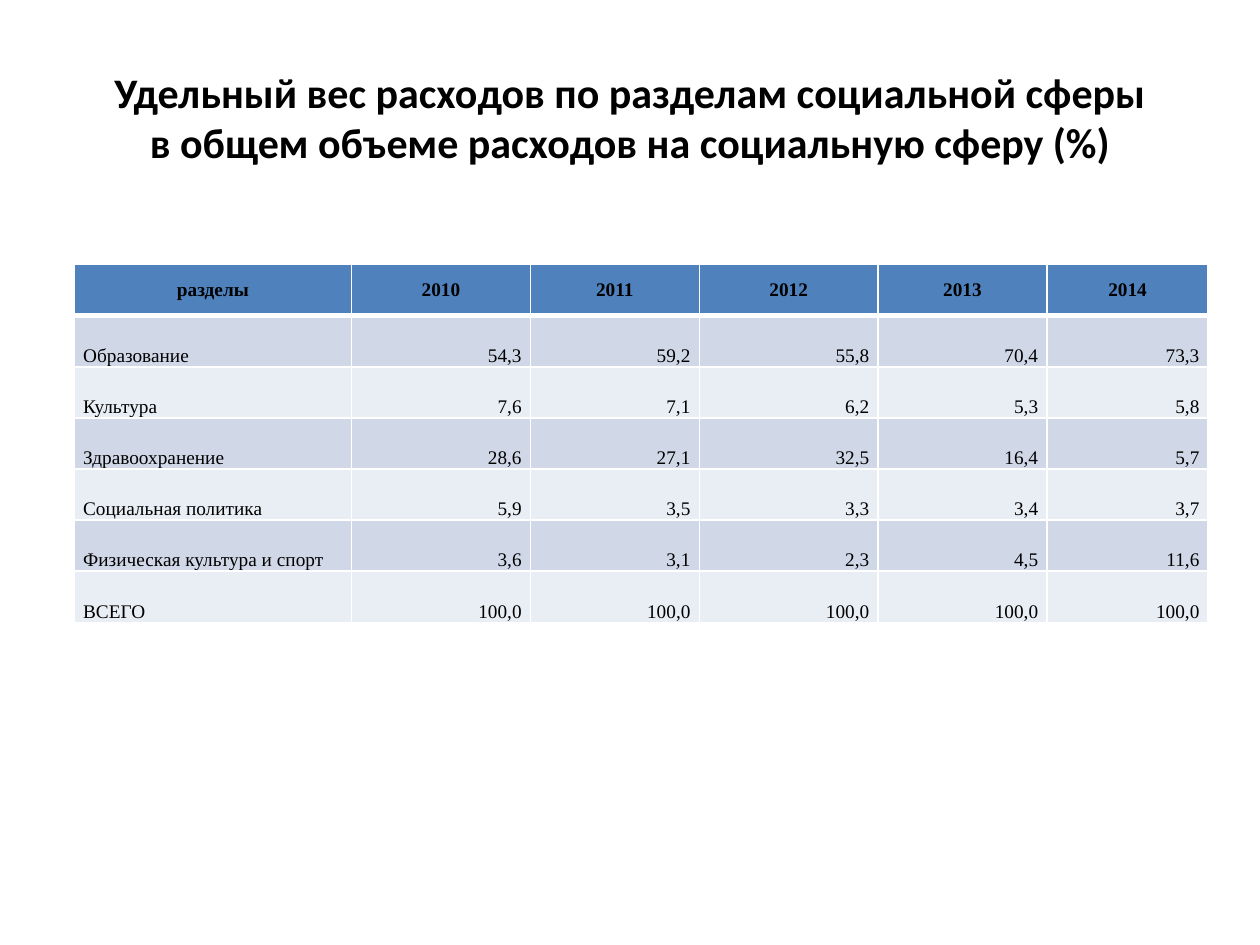
from lxml.etree import SubElement
from pptx import Presentation
from pptx.dml.color import RGBColor
from pptx.enum.text import MSO_ANCHOR, PP_ALIGN
from pptx.oxml.ns import qn
from pptx.util import Inches, Pt

TITLE = [
    "Удельный вес расходов по разделам социальной сферы",
    "в общем объеме расходов на социальную сферу (%)",
]
HEADER = ["разделы", "2010", "2011", "2012", "2013", "2014"]
ROWS = [
    ["Образование", "54,3", "59,2", "55,8", "70,4", "73,3"],
    ["Культура", "7,6", "7,1", "6,2", "5,3", "5,8"],
    ["Здравоохранение", "28,6", "27,1", "32,5", "16,4", "5,7"],
    ["Социальная политика", "5,9", "3,5", "3,3", "3,4", "3,7"],
    ["Физическая культура и спорт", "3,6", "3,1", "2,3", "4,5", "11,6"],
    ["ВСЕГО", "100,0", "100,0", "100,0", "100,0", "100,0"],
]
COL_WIDTHS = [2.2, 1.42, 1.34, 1.42, 1.34, 1.28]
TABLE_LEFT, TABLE_TOP, TABLE_HEIGHT = 0.59, 2.1, 2.84
COLORS = {
    "text": "000000",
    "header": "4F81BD",
    "odd": "D0D8E8",
    "even": "E9EDF4",
    "border": "FFFFFF",
}


def add_run(p, text, font, size, bold):
    r = p.add_run()
    r.text = text
    r.font.name = font
    r.font.size = Pt(size)
    r.font.bold = bold
    r.font.color.rgb = RGBColor.from_string(COLORS["text"])


def set_borders(cell, top, bottom):
    """Draw the four cell borders; widths are in points."""
    tc_pr = cell._tc.get_or_add_tcPr()
    for tag, width in (("lnL", 1), ("lnR", 1), ("lnT", top), ("lnB", bottom)):
        ln = SubElement(tc_pr, qn(f"a:{tag}"), w=str(Pt(width)))
        fill = SubElement(ln, qn("a:solidFill"))
        SubElement(fill, qn("a:srgbClr"), val=COLORS["border"])


def add_title(s):
    tf = s.shapes.add_textbox(Inches(0.5), Inches(0.3), Inches(9), Inches(1.25)).text_frame
    tf.word_wrap = True
    tf.vertical_anchor = MSO_ANCHOR.MIDDLE
    p = tf.paragraphs[0]
    p.alignment = PP_ALIGN.CENTER
    for i, line in enumerate(TITLE):
        if i:
            p.add_line_break()
        add_run(p, line, "Calibri", 24, True)


def fill_cell(cell, text, row, col):
    is_header = row == 0
    set_borders(cell, top=3 if row == 1 else 1, bottom=3 if is_header else 1)
    cell.fill.solid()
    band = "header" if is_header else "odd" if row % 2 else "even"
    cell.fill.fore_color.rgb = RGBColor.from_string(COLORS[band])
    cell.margin_left = cell.margin_right = Inches(0.07)
    cell.margin_top = cell.margin_bottom = 0
    cell.vertical_anchor = MSO_ANCHOR.MIDDLE if is_header else MSO_ANCHOR.BOTTOM
    p = cell.text_frame.paragraphs[0]
    if is_header:
        p.alignment = PP_ALIGN.CENTER
    else:
        p.alignment = PP_ALIGN.RIGHT if col else PP_ALIGN.LEFT
    add_run(p, text, "Times New Roman", 11, is_header)


def add_spending_table(s):
    data = [HEADER] + ROWS
    table = s.shapes.add_table(
        len(data), len(HEADER), Inches(TABLE_LEFT), Inches(TABLE_TOP),
        Inches(sum(COL_WIDTHS)), Inches(TABLE_HEIGHT),
    ).table
    for column, width in zip(table.columns, COL_WIDTHS):
        column.width = Inches(width)
    for row, values in enumerate(data):
        for col, text in enumerate(values):
            fill_cell(table.cell(row, col), text, row, col)


def main():
    prs = Presentation()
    prs.slide_width, prs.slide_height = Inches(10), Inches(7.5)
    s = prs.slides.add_slide(prs.slide_layouts[6])
    add_title(s)
    add_spending_table(s)
    prs.save("out.pptx")


if __name__ == "__main__":
    main()
